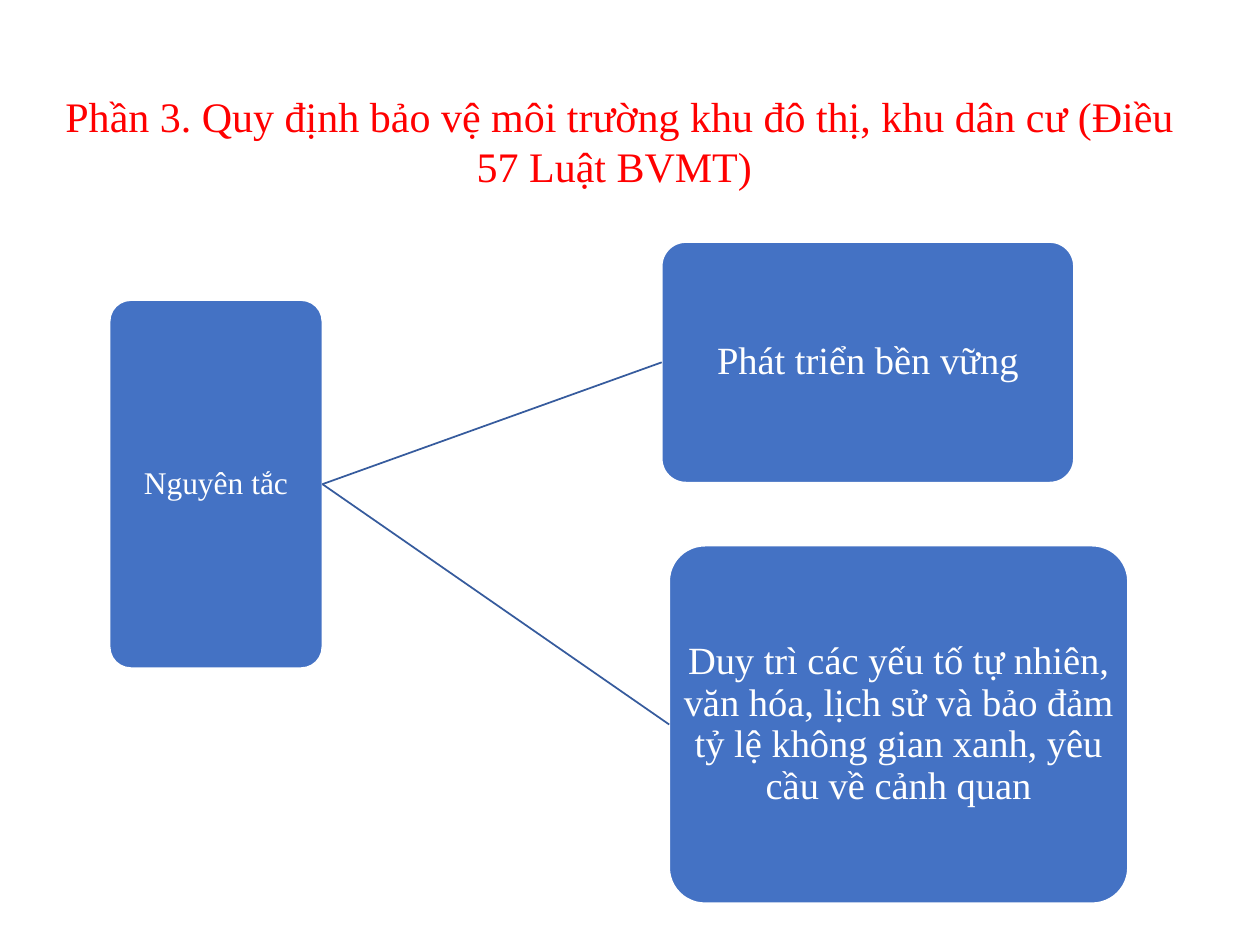
from pptx import Presentation
from pptx.dml.color import RGBColor
from pptx.enum.shapes import MSO_CONNECTOR, MSO_SHAPE
from pptx.enum.text import MSO_ANCHOR, PP_ALIGN
from pptx.oxml.ns import qn
from pptx.util import Cm, Pt

ROUND = MSO_SHAPE.ROUNDED_RECTANGLE
LINE = MSO_CONNECTOR.STRAIGHT
MID, TOP = MSO_ANCHOR.MIDDLE, MSO_ANCHOR.TOP
CENTER = PP_ALIGN.CENTER
BLUE = RGBColor(0x44, 0x72, 0xC4)
NAVY = RGBColor(0x36, 0x5B, 0x9D)
WHITE = RGBColor(0xFF, 0xFF, 0xFF)
RED = RGBColor(0xFF, 0x00, 0x00)
LEFT, RIGHT = 1, 3


def write(frame, text, size=22, color=WHITE, font="Times New Roman",
          pad=None, space=None, anchor=MID):
    frame.word_wrap = True
    frame.vertical_anchor = anchor
    if pad is not None:
        frame.margin_left = frame.margin_right = Cm(pad)
        frame.margin_top = frame.margin_bottom = Cm(pad)
    para = frame.paragraphs[0]
    para.alignment = CENTER
    para.line_spacing = space
    run = para.add_run()
    run.text = text
    run.font.name = font
    run.font.size = Pt(size)
    run.font.color.rgb = color


class Board:
    """Draws styled elements on the current slide."""

    def __init__(self, slide):
        self.shapes = slide.shapes
        self.fill, self.edge, self.link = BLUE, WHITE, NAVY
        self.width = Pt(1)

    def title(self, text, *area):
        box = self.shapes.add_textbox(*map(Cm, area))
        write(box.text_frame, text, size=24, color=RED, anchor=TOP)

    def box(self, text, *area, size=22):
        box = self.shapes.add_shape(ROUND, *map(Cm, area))
        box.adjustments[0] = 0.1
        box.shadow.inherit = False
        box.fill.solid()
        box.fill.fore_color.rgb = self.fill
        box.line.color.rgb = self.edge
        box.line.width = self.width
        write(box.text_frame, text, size=size, pad=0.05, space=0.9)
        return box

    def join(self, start, end):
        line = self.shapes.add_connector(LINE, 0, 0, 0, 0)
        line.begin_connect(start, RIGHT)
        line.end_connect(end, LEFT)
        line.line.color.rgb = self.link
        line.line.width = self.width
        props = line._element.spPr
        props.append(props.makeelement(qn("a:effectLst"), {}))


def main():
    deck = Presentation()
    deck.slide_width, deck.slide_height = Cm(25.4), Cm(19.05)
    board = Board(deck.slides.add_slide(deck.slide_layouts[6]))
    root = board.box("Nguyên tắc", 2.21, 6.05, 4.29, 7.42, size=18)
    rules = [
        ("Phát triển bền vững", 13.34, 4.88, 8.31, 4.85),
        ("Duy trì các yếu tố tự nhiên, văn hóa, lịch sử và bảo đảm "
         "tỷ lệ không gian xanh, yêu cầu về cảnh quan",
         13.49, 11, 9.25, 7.21),
    ]
    for rule in rules:
        board.join(root, board.box(*rule))
    board.title("Phần 3. Quy định bảo vệ môi trường khu đô thị, "
                "khu dân cư (Điều 57 Luật BVMT) ", 1.06, 1.7, 22.86, 2.31)
    deck.save("out.pptx")


if __name__ == "__main__":
    main()
